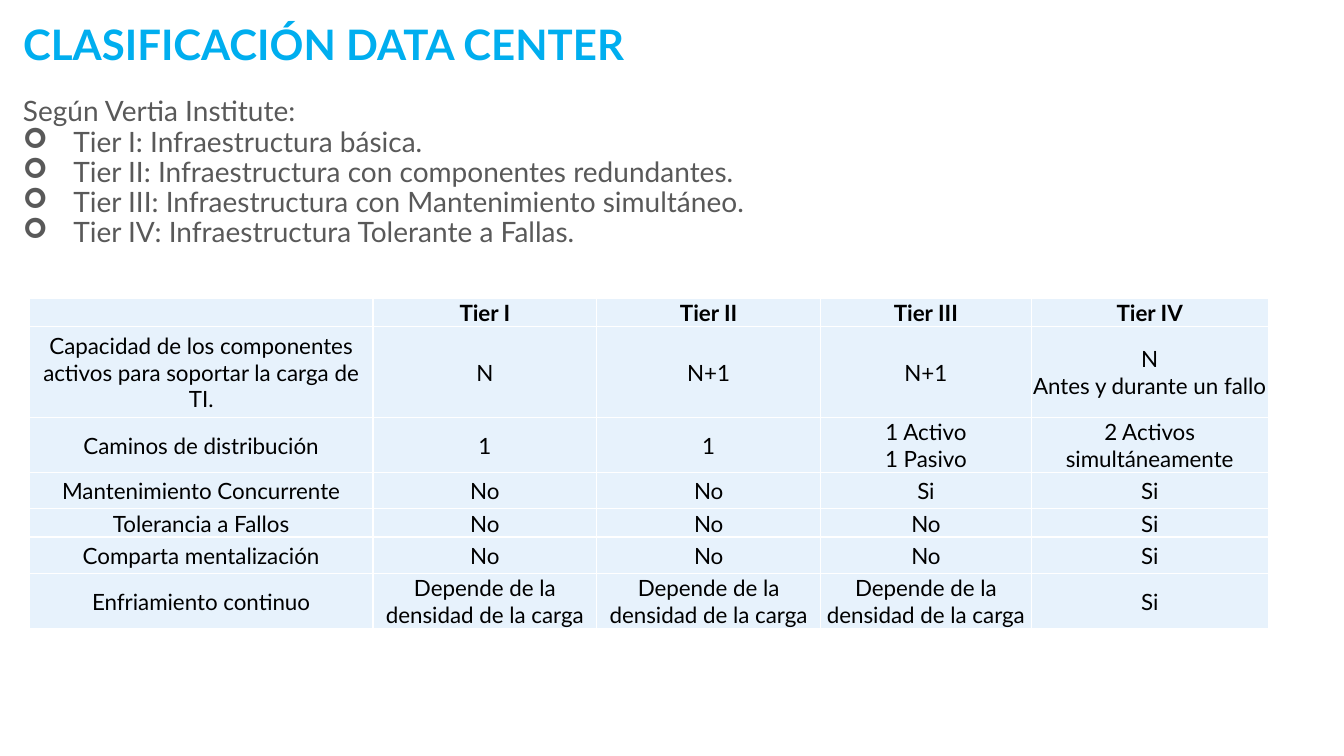
import pptx
import pptx.dml.color
import pptx.enum.text
import pptx.util
from lxml import etree
from pptx.oxml.ns import qn

Cm = pptx.util.Cm
Pt = pptx.util.Pt
ALIGN = pptx.enum.text.PP_ALIGN
ANCHOR = pptx.enum.text.MSO_ANCHOR


def color(value):
    return pptx.dml.color.RGBColor.from_string(value)


def add_text(para, text, size, hex_color, bold=False):
    for number, line in enumerate(text.split("\n")):
        if number:
            para.add_line_break()
        span = para.add_run()
        span.text = line
        span.font.name = "Lato"
        span.font.size = Pt(size)
        span.font.bold = bold
        span.font.color.rgb = color(hex_color)


deck = pptx.Presentation()
deck.slide_width = Cm(33.87)
deck.slide_height = Cm(19.05)
page = deck.slides.add_slide(deck.slide_layouts[5])

# Title
title = page.shapes.title
title.left, title.top, title.width, title.height = Cm(0.33), Cm(0.33), Cm(24.13), Cm(1.52)
title.text_frame.vertical_anchor = ANCHOR.BOTTOM
title.text_frame.auto_size = pptx.enum.text.MSO_AUTO_SIZE.NONE
para = title.text_frame.paragraphs[0]
para.alignment = ALIGN.LEFT
para.line_spacing = 0.8
add_text(para, "CLASIFICACIÓN DATA CENTER", 30, "00AEEF", bold=True)

# Introduction and tier list
tiers = [
    "Tier I: Infraestructura básica.",
    "Tier II: Infraestructura con componentes redundantes.",
    "Tier III: Infraestructura con Mantenimiento simultáneo.",
    "Tier IV: Infraestructura Tolerante a Fallas.",
]
box = page.shapes.add_textbox(Cm(0.33), Cm(2.34), Cm(21.79), Cm(5.99))
frame = box.text_frame
frame.word_wrap = True
para = frame.paragraphs[0]
para.alignment = ALIGN.JUSTIFY
para.line_spacing = 0.9
add_text(para, "Según Vertia Institute:", 20, "595959")
for tier in tiers:
    para = frame.add_paragraph()
    para.alignment = ALIGN.JUSTIFY
    para.line_spacing = 0.9
    properties = para._p.get_or_add_pPr()
    properties.set("marL", str(Cm(1.27)))
    properties.set("indent", str(-Cm(1.27)))
    etree.SubElement(properties, qn("a:buFont"), typeface="Wingdings")
    etree.SubElement(properties, qn("a:buChar"), char="➢")
    add_text(para, tier, 20, "595959")

# Comparison table
cooling = "Depende de la densidad de la carga"
rows = [
    ["", "Tier I", "Tier II", "Tier III", "Tier IV"],
    ["Capacidad de los componentes activos para soportar la carga de TI.",
     "N", "N+1", "N+1", "N\nAntes y durante un fallo"],
    ["Caminos de distribución", "1", "1", "1 Activo\n1 Pasivo", "2 Activos simultáneamente"],
    ["Mantenimiento Concurrente", "No", "No", "Si", "Si"],
    ["Tolerancia a Fallos", "No", "No", "No", "Si"],
    ["Comparta mentalización", "No", "No", "No", "Si"],
    ["Enfriamiento continuo", cooling, cooling, cooling, "Si"],
]
widths = [8.66, 5.64, 5.64, 5.31, 5.97]
heights = [0.7, 2.29, 1.38, 0.92, 0.7, 0.92, 1.38]
table = page.shapes.add_table(
    len(rows), len(widths), Cm(0.74), Cm(7.52), Cm(sum(widths)), Cm(sum(heights))
).table
table.first_row = False
table.horz_banding = False
for column, width in zip(table.columns, widths):
    column.width = Cm(width)

for row_number, texts in enumerate(rows):
    table.rows[row_number].height = Cm(heights[row_number])
    for column_number, text in enumerate(texts):
        cell = table.cell(row_number, column_number)
        cell.margin_left = cell.margin_right = cell.margin_top = Cm(0.03)
        cell.margin_bottom = 0
        cell.vertical_anchor = ANCHOR.MIDDLE

        # White borders go before the fill
        properties = cell._tc.get_or_add_tcPr()
        for side in ("lnL", "lnR", "lnT", "lnB"):
            border = etree.SubElement(properties, qn("a:" + side), w=str(Pt(1)))
            paint = etree.SubElement(border, qn("a:solidFill"))
            etree.SubElement(paint, qn("a:srgbClr"), val="FFFFFF")
        cell.fill.solid()
        cell.fill.fore_color.rgb = color("E7F2FC")

        para = cell.text_frame.paragraphs[0]
        para.alignment = ALIGN.CENTER
        if text:
            add_text(para, text, 16, "000000", bold=row_number == 0)
        else:
            # Keeps the empty corner cell from stretching its row
            etree.SubElement(para._p, qn("a:endParaRPr"), sz="1600")

deck.save("out.pptx")
